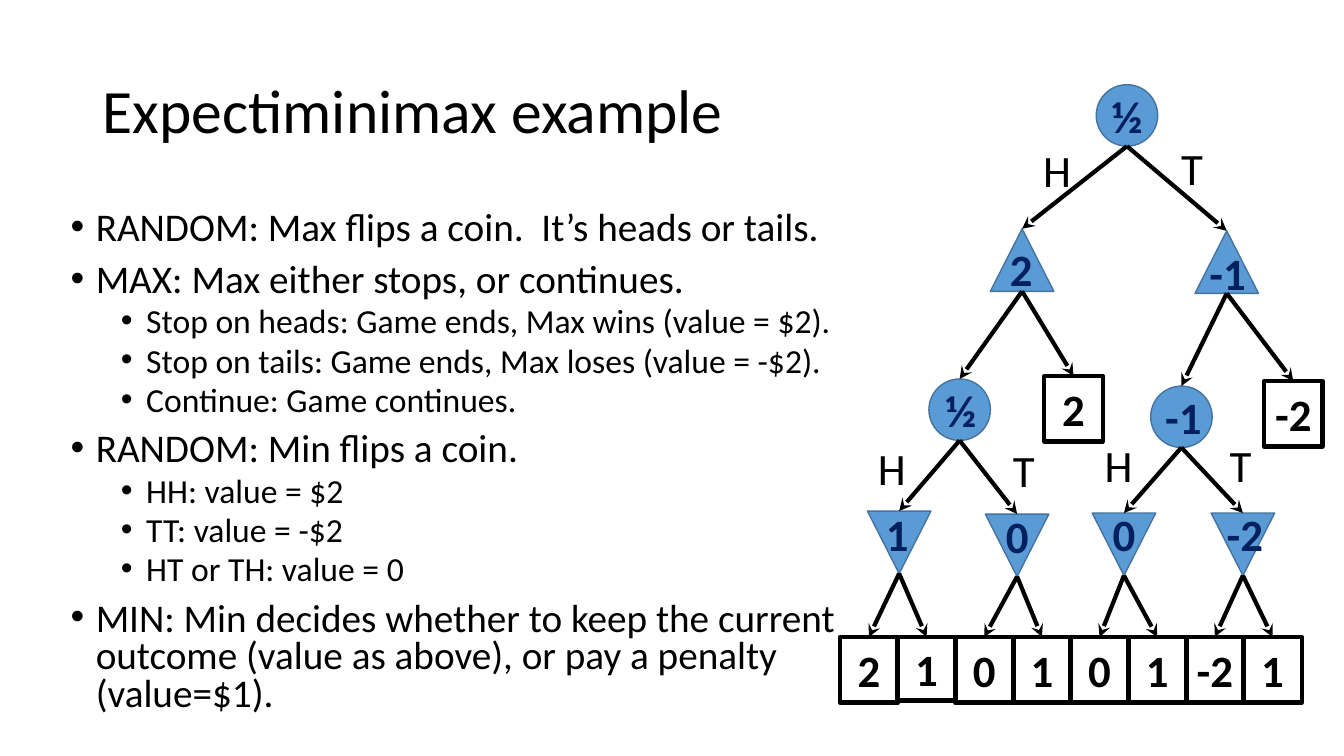
from dataclasses import dataclass

from lxml import etree
from pptx import Presentation
from pptx import util as u
from pptx.dml.color import RGBColor
from pptx.enum import shapes, text
from pptx.oxml import ns


@dataclass(frozen=True)
class Theme:
    font: str = "Calibri"
    ink: str = "000000"
    value: str = "002060"
    node: str = "5B9BD5"
    outline: str = "43739E"
    title_size: int = 44
    body_sizes: tuple = (28, 24)
    tree_size: int = 32
    thick: float = 3
    thin: float = 1


@dataclass(frozen=True)
class Kind:
    preset: shapes.MSO_SHAPE
    columns: float
    rows: float
    rotation: int = 0


@dataclass(frozen=True)
class Node:
    kind: Kind
    centre: float
    top: float
    value: str
    value_left: float = 0
    value_top: float = 0


@dataclass(frozen=True)
class Branch:
    label: str
    left: float
    top: float


THEME = Theme()

# The page is a grid of 133.33 columns by 75 rows
WIDTH, HEIGHT = u.Inches(13.33), u.Inches(7.5)
COLUMN, ROW = WIDTH / 133.33, HEIGHT / 75

CHANCE = Kind(shapes.MSO_SHAPE.OVAL, 6.1, 6.1)
MAX = Kind(shapes.MSO_SHAPE.ISOSCELES_TRIANGLE, 6.3, 6.2)
MIN = Kind(shapes.MSO_SHAPE.ISOSCELES_TRIANGLE, 6.3, 6.2, 180)
LEAF = Kind(shapes.MSO_SHAPE.RECTANGLE, 5.8, 6.5)
SHORT_LEAF = Kind(shapes.MSO_SHAPE.RECTANGLE, 5.8, 6.3)

TITLE = "Expectiminimax example"
BODY = [
    (0, "RANDOM: Max flips a coin.  It’s heads or tails."),
    (0, "MAX: Max either stops, or continues."),
    (1, "Stop on heads: Game ends, Max wins (value = $2)."),
    (1, "Stop on tails: Game ends, Max loses (value = -$2)."),
    (1, "Continue: Game continues."),
    (0, "RANDOM: Min flips a coin."),
    (1, "HH: value = $2"),
    (1, "TT: value = -$2"),
    (1, "HT or TH: value = 0"),
    (0, "MIN: Min decides whether to keep the current outcome "
        "(value as above), or pay a penalty (value=$1)."),
]

NODES = {
    "root": Node(CHANCE, 111.8, 8.4, "½", 109.3, 8.3),
    "heads": Node(MAX, 101.4, 22.7, "2", 99.2, 23.5),
    "tails": Node(MAX, 121.7, 22.9, "-1", 119, 23.9),
    "heads flip": Node(CHANCE, 95.2, 37.6, "½", 92.8, 37.5),
    "tails flip": Node(CHANCE, 117.2, 38.3, "-1", 114.6, 38.2),
    "HH": Node(MIN, 89.2, 50.7, "1", 86.9, 49.8),
    "HT": Node(MIN, 100.9, 51, "0", 98.8, 50),
    "TH": Node(MIN, 111.5, 50.9, "0", 109.4, 49.8),
    "TT": Node(MIN, 123.3, 50.9, "-2", 120.7, 49.8),
    "heads stop": Node(LEAF, 106.5, 37.3, "2"),
    "tails stop": Node(LEAF, 128.3, 37.8, "-2"),
}
EDGES = [
    ("root", "heads"), ("root", "tails"),
    ("heads", "heads flip"), ("heads", "heads stop"),
    ("tails", "tails flip"), ("tails", "tails stop"),
    ("heads flip", "HH"), ("heads flip", "HT"),
    ("tails flip", "TH"), ("tails flip", "TT"),
]
BRANCHES = [
    Branch("T", 116.2, 13.5), Branch("H", 102.5, 13.7),
    Branch("H", 86.1, 43.2), Branch("H", 108.6, 42.9),
    Branch("T", 121, 42.9), Branch("T", 99.5, 43.4),
]

# The bottom row holds a pair of outcomes (keep, pay) for each min node
OUTCOMES = {"HH": "2", "HT": "0", "TH": "0", "TT": "-2"}
for pair, (parent, keep) in enumerate(OUTCOMES.items()):
    for side, outcome in enumerate((keep, "1")):
        name = f"{parent} {side}"
        index = 2 * pair + side
        kind = SHORT_LEAF if index == 1 else LEAF
        NODES[name] = Node(kind, 86.2 + 5.72 * index, 63.2, outcome)
        EDGES.append((parent, name))


def place(left: float, top: float, columns: float, rows: float) -> tuple:
    return (round(left * COLUMN), round(top * ROW),
            round(columns * COLUMN), round(rows * ROW))


def format_text(para, size: float, colour: str, bold: bool = False) -> None:
    for span in para.runs:
        span.font.name = THEME.font
        span.font.size = u.Pt(size)
        span.font.bold = bold
        span.font.color.rgb = RGBColor.from_string(colour)


def set_box(box, left: float, top: float, columns: float, rows: float) -> None:
    box.left, box.top, box.width, box.height = place(left, top, columns, rows)


def draw_title(page) -> None:
    title = page.shapes.title
    set_box(title, 9.2, 4, 115, 14.5)
    frame = title.text_frame
    frame.text = TITLE
    frame.vertical_anchor = text.MSO_ANCHOR.MIDDLE
    frame.auto_size = text.MSO_AUTO_SIZE.NONE
    para = frame.paragraphs[0]
    para.alignment = text.PP_ALIGN.LEFT
    para.line_spacing = 0.9
    format_text(para, THEME.title_size, THEME.ink)


def draw_body(page) -> None:
    body = page.placeholders[1]
    set_box(body, 6, 20.5, 78.9, 52.9)
    frame = body.text_frame
    frame.text = "\n".join(line for _, line in BODY)
    frame.auto_size = text.MSO_AUTO_SIZE.NONE
    for para, (level, _) in zip(frame.paragraphs, BODY):
        para.level = level
        para.line_spacing = 0.8
        para.space_before = u.Pt(5 if level else 10)
        format_text(para, THEME.body_sizes[level], THEME.ink)
        properties = para._p.get_or_add_pPr()
        properties.set("marL", str(u.Inches(0.25 + 0.5 * level)))
        properties.set("indent", str(u.Inches(-0.25)))
        etree.SubElement(properties, ns.qn("a:buFont")).set("typeface", "Arial")
        etree.SubElement(properties, ns.qn("a:buChar")).set("char", "•")


def draw_node(page, node: Node):
    kind = node.kind
    shape = page.shapes.add_shape(kind.preset, *place(
        node.centre - kind.columns / 2, node.top, kind.columns, kind.rows))
    shape.rotation = kind.rotation
    shape.shadow.inherit = False
    is_leaf = kind in (LEAF, SHORT_LEAF)
    if is_leaf:
        shape.fill.background()
        shape.text_frame.text = node.value
        shape.text_frame.vertical_anchor = text.MSO_ANCHOR.MIDDLE
        para = shape.text_frame.paragraphs[0]
        para.alignment = text.PP_ALIGN.CENTER
        format_text(para, THEME.tree_size, THEME.ink, True)
    else:
        shape.fill.solid()
        shape.fill.fore_color.rgb = RGBColor.from_string(THEME.node)
    shape.line.color.rgb = RGBColor.from_string(THEME.ink if is_leaf else THEME.outline)
    shape.line.width = u.Pt(THEME.thick if is_leaf else THEME.thin)
    return shape


def draw_label(page, label: str, left: float, top: float,
               colour: str, bold: bool) -> None:
    columns = {"T": 4.2, "H": 4.8, "½": 5.1}.get(label, 4.3 if len(label) == 1 else 5.7)
    box = page.shapes.add_textbox(*place(left, top, columns, 6.4))
    box.text_frame.text = label
    box.text_frame.word_wrap = False
    box.text_frame.auto_size = text.MSO_AUTO_SIZE.SHAPE_TO_FIT_TEXT
    format_text(box.text_frame.paragraphs[0], THEME.tree_size, colour, bold)


def draw_edge(page, parent, child, child_is_leaf: bool) -> None:
    edge = page.shapes.add_connector(
        shapes.MSO_CONNECTOR.STRAIGHT,
        parent.left + parent.width // 2, parent.top + parent.height,
        child.left + child.width // 2, child.top)
    if child_is_leaf:
        edge.end_connect(child, 0)
    edge.line.color.rgb = RGBColor.from_string(THEME.ink)
    edge.line.width = u.Pt(THEME.thick)
    etree.SubElement(edge.line._get_or_add_ln(), ns.qn("a:tailEnd")).set("type", "stealth")
    etree.SubElement(edge._element.spPr, ns.qn("a:effectLst"))


def main() -> None:
    deck = Presentation()
    deck.slide_width, deck.slide_height = WIDTH, HEIGHT
    page = deck.slides.add_slide(deck.slide_layouts[1])
    draw_title(page)
    draw_body(page)

    # Game tree: nodes, coin labels, arrows, then values on the nodes
    drawn = {name: draw_node(page, node) for name, node in NODES.items()}
    for branch in BRANCHES:
        draw_label(page, branch.label, branch.left, branch.top, THEME.ink, False)
    for parent, child in EDGES:
        draw_edge(page, drawn[parent], drawn[child], NODES[child].kind in (LEAF, SHORT_LEAF))
    for node in NODES.values():
        if node.value_left:
            draw_label(page, node.value, node.value_left, node.value_top, THEME.value, True)
    deck.save("out.pptx")


if __name__ == "__main__":
    main()
